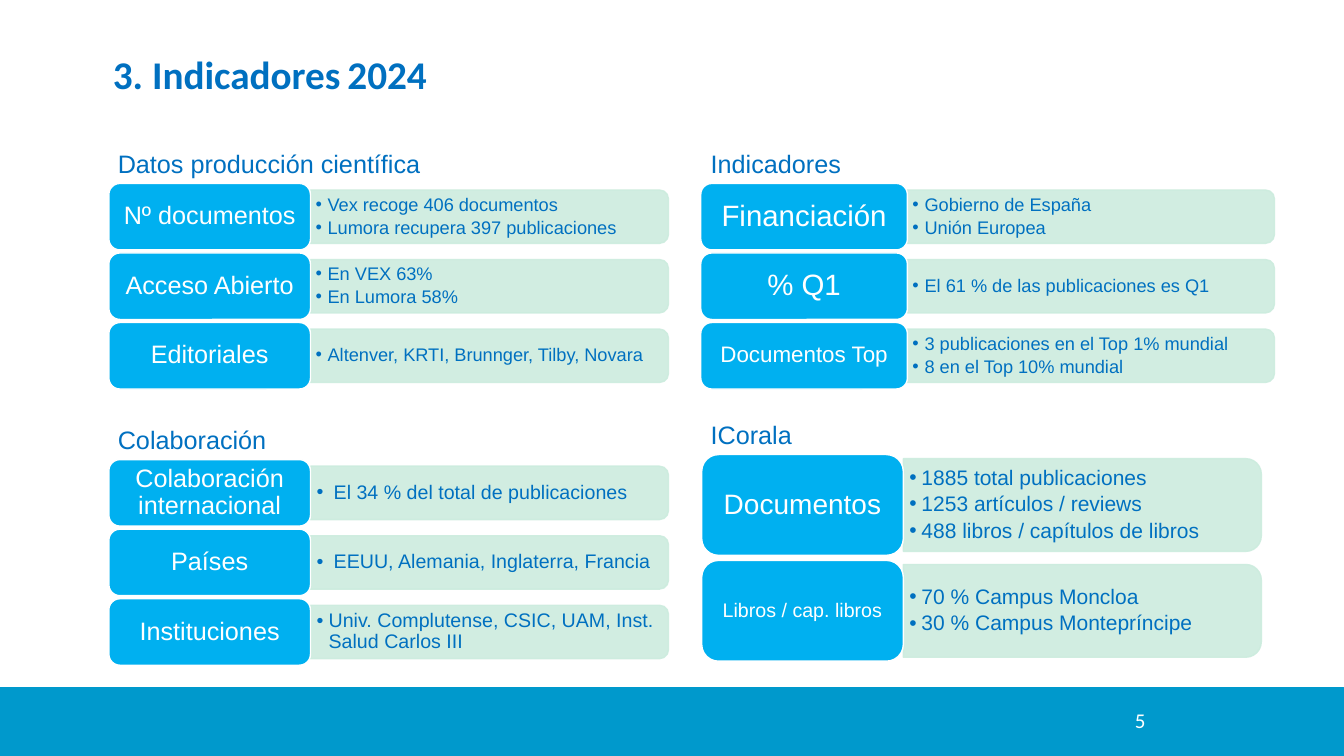
from dataclasses import dataclass

from lxml.etree import SubElement
from pptx import Presentation
from pptx.dml.color import RGBColor
from pptx.enum.shapes import MSO_SHAPE
from pptx.enum.text import MSO_ANCHOR, MSO_AUTO_SIZE, PP_ALIGN
from pptx.oxml.ns import qn
from pptx.util import Emu, Pt

PX = 9144  # EMU per px, 100 px to the inch
SLIDE_W, SLIDE_H = 1333, 750
BLUE, SKY, MINT, TEAL, WHITE = "0070C0", "00B0F0", "CCECDE", "0099CC", "FFFFFF"


@dataclass
class Row:
    label: str
    label_size: int
    points: list
    indent: int = 12


@dataclass
class Section:
    heading: str
    heading_at: tuple
    heading_width: int
    left: int
    top: int
    label_width: int
    panel_width: int
    rows: list
    point_size: int
    row_height: int = 66
    panel_height: int = 53
    pitch: int = 69
    margin: int = 5


SECTIONS = [
    Section("Datos producción científica", (107, 142), 323, 108, 182, 200, 355, [
        Row("Nº documentos", 18, ["Vex recoge 406 documentos", "Lumora recupera 397 publicaciones"]),
        Row("Acceso Abierto", 18, ["En VEX 63%", "En Lumora 58%"]),
        Row("Editoriales", 18, ["Altenver, KRTI, Brunnger, Tilby, Novara"]),
    ], 13),
    Section("Colaboración", (107, 416), 169, 108, 456, 200, 355, [
        Row("Colaboración internacional", 18, ["El 34 % del total de publicaciones"], 17),
        Row("Países", 18, ["EEUU, Alemania, Inglaterra, Francia"], 17),
        Row("Instituciones", 18, ["Univ. Complutense, CSIC, UAM, Inst. Salud Carlos III"]),
    ], 14, margin=6),
    Section("Indicadores", (695, 142), 151, 695, 182, 205, 364, [
        Row("Financiación", 21, ["Gobierno de España", "Unión Europea"]),
        Row("% Q1", 21, ["El 61 % de las publicaciones es Q1"]),
        Row("Documentos Top", 16, ["3 publicaciones en el Top 1% mundial", "8 en el Top 10% mundial"]),
    ], 13),
    Section("ICorala", (695, 411), 104, 696, 451, 200, 355, [
        Row("Documentos", 20, ["1885 total publicaciones", "1253 artículos / reviews",
                               "488 libros / capítulos de libros"]),
        Row("Libros / cap. libros", 14, ["70 % Campus Moncloa", "30 % Campus Montepríncipe"]),
    ], 15, row_height=100, panel_height=92, pitch=105, margin=6),
]


def px(*lengths):
    return [Emu(round(length * PX)) for length in lengths]


def color(value):
    return RGBColor.from_string(value)


def add_run(paragraph, text, size, hue, font="Arial", bold=False):
    run = paragraph.add_run()
    run.text = text
    run.font.name, run.font.size, run.font.bold = font, Pt(size), bold
    run.font.color.rgb = color(hue)


def set_frame(frame, across=10, down=5, anchor=MSO_ANCHOR.TOP, wrap=True):
    frame.word_wrap = wrap
    frame.auto_size = MSO_AUTO_SIZE.NONE
    frame.vertical_anchor = anchor
    frame.margin_left, frame.margin_right, frame.margin_top, frame.margin_bottom = px(
        across, across, down, down)


def add_text_frame(slide, box, **settings):
    frame = slide.shapes.add_textbox(*px(*box)).text_frame
    set_frame(frame, **settings)
    return frame


def add_block(slide, kind, box, fill, line, line_width):
    block = slide.shapes.add_shape(kind, *px(*box))
    block.shadow.inherit = False
    block.fill.solid()
    block.fill.fore_color.rgb = color(fill)
    block.line.color.rgb = color(line)
    block.line.width = Pt(line_width)
    return block


def add_bullet(paragraph, indent):
    properties = paragraph._p.get_or_add_pPr()
    properties.set("marL", str(indent * PX))
    properties.set("indent", str(-indent * PX))
    SubElement(properties, qn("a:buFont")).set("typeface", "Arial")
    SubElement(properties, qn("a:buChar")).set("char", "•")


def add_label(slide, box, row):
    label = add_block(slide, MSO_SHAPE.ROUNDED_RECTANGLE, box, SKY, WHITE, 1)
    set_frame(label.text_frame, 7, 4, MSO_ANCHOR.MIDDLE)
    paragraph = label.text_frame.paragraphs[0]
    paragraph.alignment = PP_ALIGN.CENTER
    paragraph.line_spacing = 0.9
    add_run(paragraph, row.label, row.label_size, WHITE)


def add_panel(slide, box, row, size, margin):
    # A quarter turn about the centre puts the round corners on the right
    left, top, width, height = box
    turned = (left + (width - height) / 2, top + (height - width) / 2, height, width)
    panel = add_block(slide, MSO_SHAPE.ROUND_2_SAME_RECTANGLE, turned, MINT, MINT, 1)
    panel.rotation = 90
    for tint in panel._element.spPr.iter(qn("a:srgbClr")):
        SubElement(tint, qn("a:alpha")).set("val", "90000")

    frame = add_text_frame(slide, (left, top, width - 2, height), across=margin, down=3,
                           anchor=MSO_ANCHOR.MIDDLE)
    for index, point in enumerate(row.points):
        paragraph = frame.add_paragraph() if index else frame.paragraphs[0]
        add_bullet(paragraph, row.indent)
        paragraph.line_spacing = 0.9
        paragraph.space_after = Pt(size * 0.18)
        add_run(paragraph, point, size, BLUE)


def add_section(slide, section):
    heading = add_text_frame(slide, (*section.heading_at, section.heading_width, 40), wrap=False)
    add_run(heading.paragraphs[0], section.heading, 18, BLUE)
    panel_left = section.left + section.label_width
    for index, row in enumerate(section.rows):
        top = section.top + index * section.pitch
        panel_top = top + (section.row_height - section.panel_height) / 2
        add_panel(slide, (panel_left, panel_top, section.panel_width, section.panel_height),
                  row, section.point_size, section.margin)
        add_label(slide, (section.left, top, section.label_width, section.row_height), row)


def add_title(slide):
    title = slide.shapes.title
    title.left, title.top, title.width, title.height = px(102, 45, 575, 57)
    set_frame(title.text_frame)
    paragraph = title.text_frame.paragraphs[0]
    paragraph.alignment = PP_ALIGN.LEFT
    add_run(paragraph, "3. Indicadores", 28, BLUE, "Calibri", True)
    add_run(paragraph, " ", 18, "000000")
    add_run(paragraph, "2024", 28, BLUE, "Calibri", True)


def add_footer(slide):
    add_block(slide, MSO_SHAPE.RECTANGLE, (0, 682, SLIDE_W, 68), TEAL, TEAL, 0.75)
    page = add_text_frame(slide, (928, 705, 218, 33), down=1).paragraphs[0]
    page.alignment = PP_ALIGN.RIGHT
    page.line_spacing = Pt(15)
    add_run(page, "5", 15, WHITE, "Calibri")


def main():
    deck = Presentation()
    deck.slide_width, deck.slide_height = px(SLIDE_W, SLIDE_H)
    slide = deck.slides.add_slide(deck.slide_layouts[5])  # title only
    add_footer(slide)
    add_title(slide)
    for section in SECTIONS:
        add_section(slide, section)
    deck.save("out.pptx")


if __name__ == "__main__":
    main()
